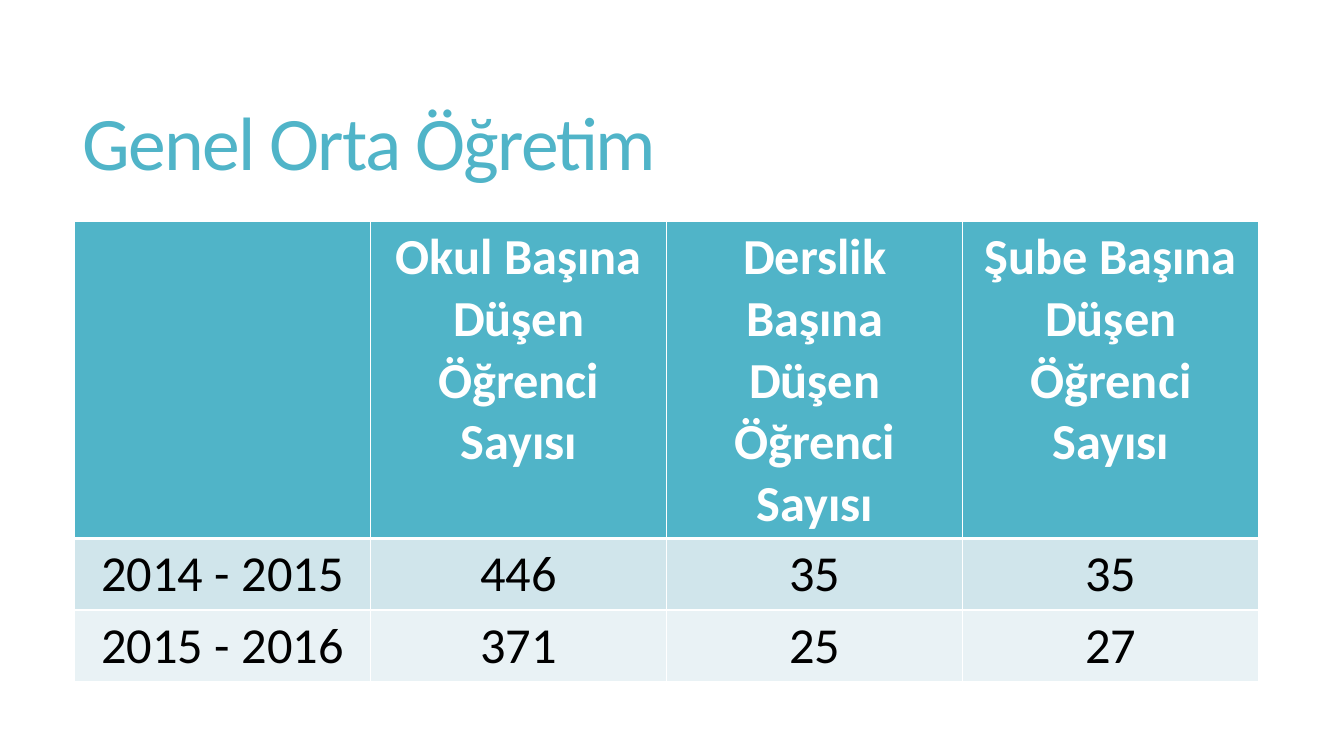
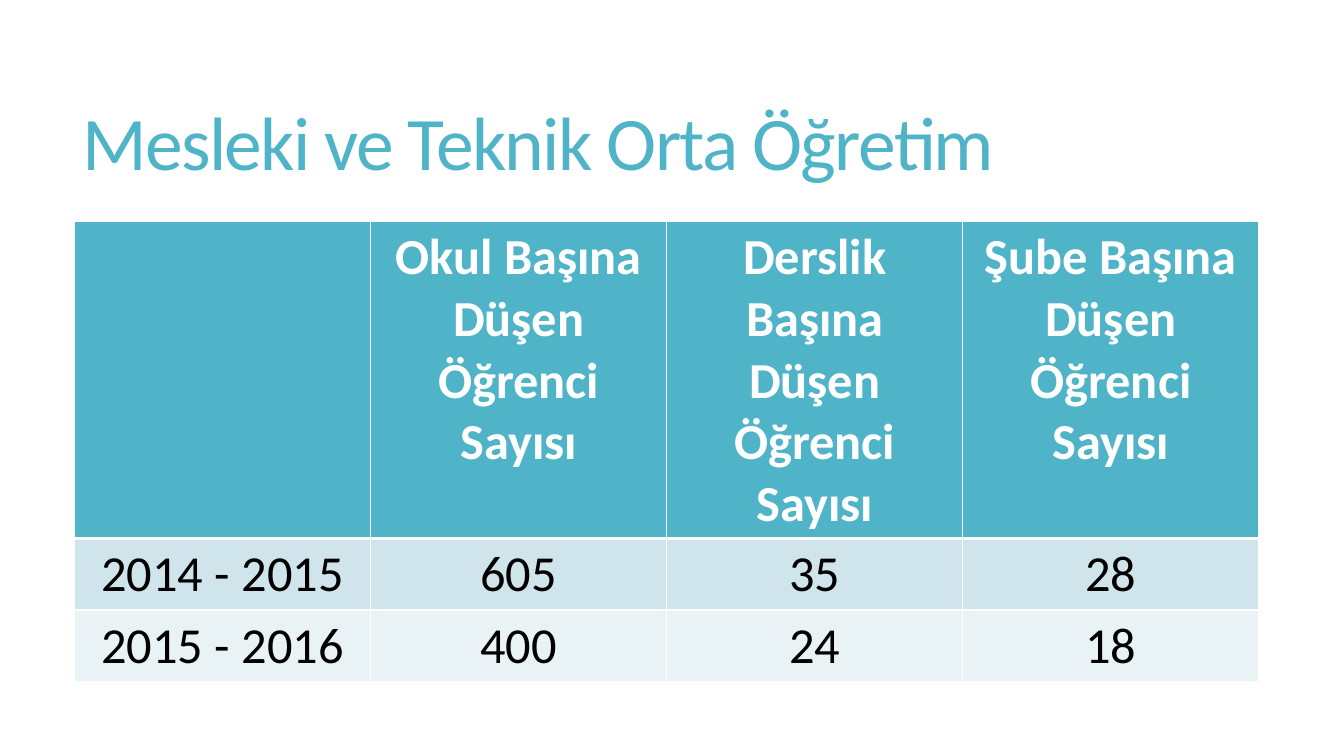
from dataclasses import dataclass

from lxml import etree
from pptx import Presentation
from pptx.dml.color import RGBColor
from pptx.enum.text import MSO_ANCHOR, PP_ALIGN
from pptx.oxml.ns import qn
from pptx.slide import Slide
from pptx.table import _Cell
from pptx.text.text import _Run
from pptx.util import Emu, Pt

CENTER = PP_ALIGN.CENTER
MIDDLE = MSO_ANCHOR.MIDDLE
EMU_PER_PX = 9525
EMU_PER_POINT = 12700
BLANK_LAYOUT = 6


@dataclass(frozen=True)
class Theme:
    font: str = "Calibri"
    accent: str = "50B4C8"
    white: str = "FFFFFF"
    black: str = "000000"
    bands: tuple[str, ...] = ("D0E5EB", "E9F2F5")
    title_size: int = 54
    table_size: int = 36
    title_tracking: int = -120
    title_line_spacing: float = 0.85
    rule: int = 1
    header_rule: int = 3


@dataclass(frozen=True)
class Box:
    left: int
    top: int
    width: int
    height: int

    def emu(self) -> tuple[Emu, ...]:
        return tuple(px(n) for n in (self.left, self.top, self.width, self.height))


@dataclass(frozen=True)
class SchoolType:
    title: str
    years: tuple[tuple[str, ...], ...]


THEME = Theme()
SLIDE_WIDTH, SLIDE_HEIGHT = 1280, 720
TITLE_BOX = Box(69, 53, 1131, 174)
COLUMN_WIDTH = 282
HEADER_HEIGHT, YEAR_HEIGHT = 302, 68
TABLE_LEFT, TABLE_TOP = 71, 211
HEADINGS = ("",) + tuple(
    f"{unit} Başına Düşen Öğrenci Sayısı" for unit in ("Okul", "Derslik", "Şube")
)
SCHOOL_TYPES = (
    SchoolType(
        "Genel Orta Öğretim",
        (("2014 - 2015", "446", "35", "35"), ("2015 - 2016", "371", "25", "27")),
    ),
    SchoolType(
        "Mesleki ve Teknik Orta Öğretim",
        (("2014 - 2015", "605", "35", "28"), ("2015 - 2016", "400", "24", "18")),
    ),
)


def px(length: int) -> Emu:
    """Turn a length in pixels into EMU."""
    return Emu(length * EMU_PER_PX)


def style_run(run: _Run, size: int, color: str, bold: bool = False) -> None:
    """Give a run the theme font with a size, colour and weight."""
    run.font.name = THEME.font
    run.font.size = Pt(size)
    run.font.bold = bold
    run.font.color.rgb = RGBColor.from_string(color)


def add_title(slide: Slide, title: str) -> None:
    """Draw the slide title."""
    frame = slide.shapes.add_textbox(*TITLE_BOX.emu()).text_frame
    frame.word_wrap = True
    frame.vertical_anchor = MIDDLE
    frame.text = title
    paragraph = frame.paragraphs[0]
    paragraph.line_spacing = THEME.title_line_spacing
    run = paragraph.runs[0]
    style_run(run, THEME.title_size, THEME.accent)
    run.font._element.set("spc", str(THEME.title_tracking))


def set_borders(cell: _Cell, top: int, bottom: int) -> None:
    """Draw the white rules around a cell, with widths in points."""
    properties = cell._tc.get_or_add_tcPr()
    widths = {"L": THEME.rule, "R": THEME.rule, "T": top, "B": bottom}
    for side, width in widths.items():
        line = etree.SubElement(
            properties, qn(f"a:ln{side}"), w=str(width * EMU_PER_POINT)
        )
        fill = etree.SubElement(line, qn("a:solidFill"))
        etree.SubElement(fill, qn("a:srgbClr"), val=THEME.white)


def fill_cell(cell: _Cell, text: str, row: int) -> None:
    """Write and style one cell according to its row."""
    is_header = row == 0
    set_borders(
        cell,
        top=THEME.header_rule if row == 1 else THEME.rule,
        bottom=THEME.header_rule if is_header else THEME.rule,
    )
    background = THEME.accent if is_header else THEME.bands[(row - 1) % len(THEME.bands)]
    cell.fill.solid()
    cell.fill.fore_color.rgb = RGBColor.from_string(background)
    cell.text_frame.text = text
    paragraph = cell.text_frame.paragraphs[0]
    paragraph.alignment = CENTER
    for run in paragraph.runs:
        color = THEME.white if is_header else THEME.black
        style_run(run, THEME.table_size, color, bold=is_header)


def add_student_table(slide: Slide, years: tuple[tuple[str, ...], ...]) -> None:
    """Draw the table of students per school, classroom and section."""
    rows = (HEADINGS, *years)
    heights = (HEADER_HEIGHT, *(YEAR_HEIGHT for _ in years))
    box = Box(TABLE_LEFT, TABLE_TOP, COLUMN_WIDTH * len(HEADINGS), sum(heights))
    table = slide.shapes.add_table(len(rows), len(HEADINGS), *box.emu()).table
    for column in table.columns:
        column.width = px(COLUMN_WIDTH)
    for row, (texts, height) in enumerate(zip(rows, heights)):
        table.rows[row].height = px(height)
        for column, text in enumerate(texts):
            fill_cell(table.cell(row, column), text, row)


def main() -> None:
    """Build and save the presentation."""
    presentation = Presentation()
    presentation.slide_width = px(SLIDE_WIDTH)
    presentation.slide_height = px(SLIDE_HEIGHT)
    for school_type in SCHOOL_TYPES:
        slide = presentation.slides.add_slide(presentation.slide_layouts[BLANK_LAYOUT])
        add_title(slide, school_type.title)
        add_student_table(slide, school_type.years)
    presentation.save("out.pptx")


if __name__ == "__main__":
    main()
